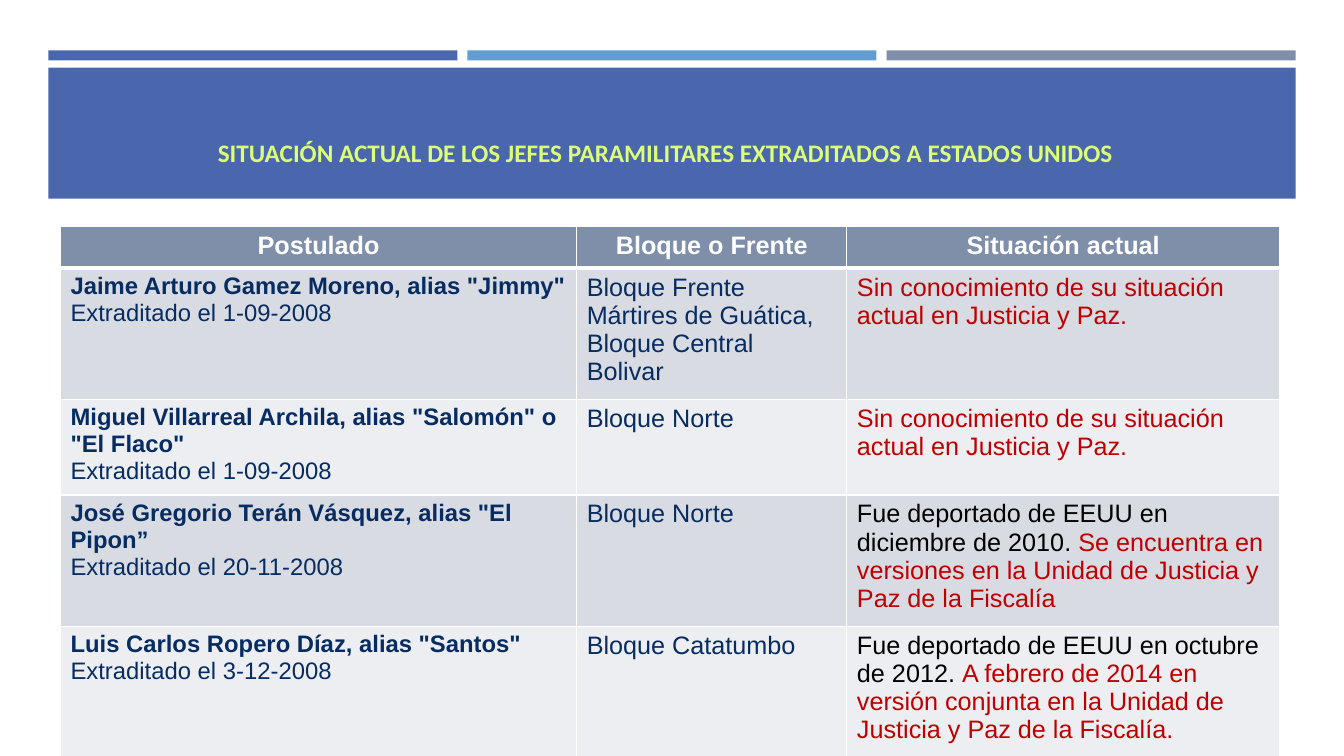
from lxml import etree
from pptx import Presentation
from pptx.dml.color import RGBColor
from pptx.enum.shapes import MSO_SHAPE as Shape
from pptx.enum.text import MSO_ANCHOR as Anchor, PP_ALIGN as Align
from pptx.oxml.ns import qn
from pptx.util import Inches, Pt

BLUE = RGBColor(0x4A, 0x66, 0xAC)
SKY = RGBColor(0x62, 0x9D, 0xD1)
SLATE = RGBColor(0x7F, 0x8F, 0xA9)
LIME = RGBColor(0xDB, 0xFF, 0x75)
NAVY = RGBColor(0x07, 0x2C, 0x62)
RED = RGBColor(0xC0, 0x00, 0x00)
BLACK = RGBColor(0x00, 0x00, 0x00)
WHITE = RGBColor(0xFF, 0xFF, 0xFF)
BANDS = (RGBColor(0xD8, 0xDB, 0xE2), RGBColor(0xEC, 0xEE, 0xF1))

TITLE = "SITUACIÓN ACTUAL DE LOS JEFES PARAMILITARES EXTRADITADOS A ESTADOS UNIDOS"
HEADERS = ("Postulado", "Bloque o Frente", "Situación actual")
UNKNOWN = "Sin conocimiento de su situación actual en Justicia y Paz."
# Name, extradition date, block, known facts, current situation
CHIEFS = (
    ('Jaime Arturo Gamez Moreno, alias "Jimmy"', "1-09-2008",
     "Bloque Frente Mártires de Guática, Bloque Central Bolivar", "", UNKNOWN),
    ('Miguel Villarreal Archila, alias "Salomón" o "El Flaco"', "1-09-2008",
     "Bloque Norte", "", UNKNOWN),
    ('José Gregorio Terán Vásquez, alias "El Pipon”', "20-11-2008",
     "Bloque Norte", "Fue deportado de EEUU en diciembre de 2010. ",
     "Se encuentra en versiones en la Unidad de Justicia y Paz de la Fiscalía"),
    ('Luis Carlos Ropero Díaz, alias "Santos"', "3-12-2008",
     "Bloque Catatumbo", "Fue deportado de EEUU en octubre de 2012. ",
     "A febrero de 2014 en versión conjunta en la Unidad de Justicia y Paz "
     "de la Fiscalía."),
)
COLUMN_WIDTHS = (5.12, 2.68, 4.29)
ROW_HEIGHT = 0.41  # minimum: rows grow to fit their text


def add_run(paragraph, text, color, size=18, bold=False, name="Arial"):
    run = paragraph.add_run()
    run.text = text
    run.font.color.rgb = color
    for attribute, value in {"size": Pt(size), "bold": bold, "name": name}.items():
        setattr(run.font, attribute, value)


def add_bar(slide, left, top, width, height, color):
    bar = slide.shapes.add_shape(Shape.RECTANGLE, Inches(left), Inches(top),
                                 Inches(width), Inches(height))
    bar.shadow.inherit = False
    bar.fill.solid()
    bar.fill.fore_color.rgb = color
    bar.line.fill.background()


def add_banner(slide, left, top, width):
    # Three accent bars above the title band
    gap = 0.1
    bar_width = (width - 2 * gap) / 3
    for index, color in enumerate((BLUE, SKY, SLATE)):
        add_bar(slide, left + index * (bar_width + gap), top, bar_width, 0.1, color)
    add_bar(slide, left, top + 0.17, width, 1.3, BLUE)

    # Title
    box = slide.shapes.add_textbox(Inches(left + 0.09), Inches(top + 0.42),
                                   Inches(width - 0.31), Inches(0.79))
    frame = box.text_frame
    frame.word_wrap = True
    frame.vertical_anchor = Anchor.BOTTOM
    paragraph = frame.paragraphs[0]
    paragraph.alignment = Align.CENTER
    paragraph.line_spacing = 1.5
    add_run(paragraph, TITLE, LIME, bold=True, name="Calibri")


def style_cell(cell, color, top=1, bottom=1):
    cell.fill.solid()
    cell.fill.fore_color.rgb = color
    properties = cell._tc.get_or_add_tcPr()
    borders = {"lnL": 1, "lnR": 1, "lnT": top, "lnB": bottom}
    for index, (tag, points) in enumerate(borders.items()):
        line = etree.Element(qn(f"a:{tag}"), w=str(Pt(points)))
        fill = etree.SubElement(line, qn("a:solidFill"))
        etree.SubElement(fill, qn("a:srgbClr"), val=str(WHITE))
        properties.insert(index, line)


def add_chiefs_table(slide, left, top, height):
    row_count = len(CHIEFS) + 1
    frame = slide.shapes.add_table(
        row_count, len(COLUMN_WIDTHS), Inches(left), Inches(top),
        Inches(sum(COLUMN_WIDTHS)), Inches(height))
    table = frame.table
    for column, width in zip(table.columns, COLUMN_WIDTHS):
        column.width = Inches(width)
    for row in table.rows:
        row.height = Inches(ROW_HEIGHT)
    frame.height = Inches(height)

    # Header row
    for cell, header in zip(table.rows[0].cells, HEADERS):
        style_cell(cell, SLATE, bottom=3)
        paragraph = cell.text_frame.paragraphs[0]
        paragraph.alignment = Align.CENTER
        add_run(paragraph, header, WHITE, bold=True)

    # One row per chief
    for index, (name, date, block, facts, situation) in enumerate(CHIEFS):
        cells = list(table.rows[index + 1].cells)
        for cell in cells:
            style_cell(cell, BANDS[index % 2], top=1 if index else 3)
        person, unit, status = (cell.text_frame for cell in cells)
        add_run(person.paragraphs[0], name, NAVY, size=17, bold=True)
        add_run(person.add_paragraph(), f"Extraditado el {date}", NAVY, size=17)
        add_run(unit.paragraphs[0], block, NAVY)
        if facts:
            add_run(status.paragraphs[0], facts, BLACK)
        add_run(status.paragraphs[0], situation, RED)


def main():
    presentation = Presentation()
    presentation.slide_width = Inches(13.33)
    presentation.slide_height = Inches(7.5)
    slide = presentation.slides.add_slide(presentation.slide_layouts[6])
    add_banner(slide, 0.48, 0.5, 12.37)
    add_chiefs_table(slide, 0.6, 2.25, 4.66)
    presentation.save("out.pptx")


if __name__ == "__main__":
    main()
